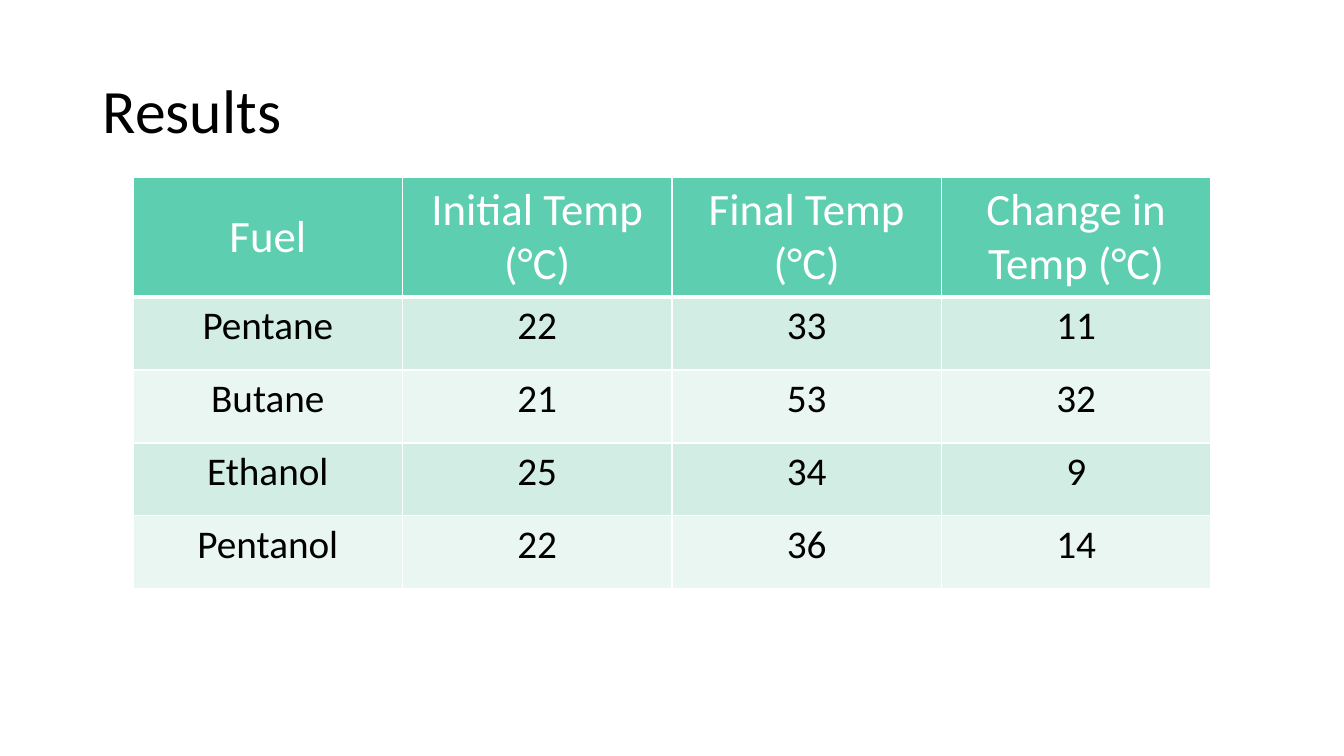
"""Build a results slide with a table of fuel temperatures."""
from lxml.etree import SubElement
from pptx import Presentation
from pptx.dml.color import RGBColor
from pptx.enum.text import MSO_ANCHOR as Anchor, PP_ALIGN as Align
from pptx.oxml.ns import qn
from pptx.util import Inches, Pt

HEADING = "Results"
COLUMNS = ["Fuel", "Initial Temp (°C)", "Final Temp (°C)", "Change in Temp (°C)"]
READINGS = [
    ("Pentane", 22, 33, 11),
    ("Butane", 21, 53, 32),
    ("Ethanol", 25, 34, 9),
    ("Pentanol", 22, 36, 14),
]
FONT = "Calibri"
WHITE, BLACK, GREEN = "FFFFFF", "000000", "5DCEAF"
BANDS = ["D2EDE3", "EAF6F2"]
HEADING_BOX = (0.92, 0.4, 11.5, 1.45)
RESULTS_BOX = (1.32, 1.76, 10.69, 3.62)


def color(code):
    return RGBColor.from_string(code)


def write(frame, text, size, ink, align, anchor):
    frame.vertical_anchor = anchor
    paragraph = frame.paragraphs[0]
    paragraph.alignment = align
    run = paragraph.add_run()
    run.text = text
    run.font.name, run.font.size, run.font.bold = FONT, Pt(size), False
    run.font.color.rgb = color(ink)
    return paragraph


def add_borders(cell, top, bottom):
    properties = cell._tc.get_or_add_tcPr()
    for side, width in (("L", 1), ("R", 1), ("T", top), ("B", bottom)):
        line = SubElement(properties, qn(f"a:ln{side}"), w=str(Pt(width)))
        fill = SubElement(line, qn("a:solidFill"))
        SubElement(fill, qn("a:srgbClr"), val=WHITE)


def add_heading(slide):
    title = slide.shapes.title
    title.left, title.top, title.width, title.height = map(Inches, HEADING_BOX)
    title.text_frame.word_wrap = True
    paragraph = write(title.text_frame, HEADING, 44, BLACK, Align.LEFT, Anchor.MIDDLE)
    paragraph.line_spacing = 0.9


def add_results(slide):
    rows = [COLUMNS, *READINGS]
    box = map(Inches, RESULTS_BOX)
    results = slide.shapes.add_table(len(rows), len(COLUMNS), *box).table
    for r, values in enumerate(rows):
        header = r == 0
        size, ink, anchor = (32, WHITE, Anchor.MIDDLE) if header else (28, BLACK, Anchor.TOP)
        for c, value in enumerate(values):
            cell = results.cell(r, c)
            add_borders(cell, 3 if r == 1 else 1, 3 if header else 1)
            cell.fill.solid()
            cell.fill.fore_color.rgb = color(GREEN if header else BANDS[(r - 1) % 2])
            cell.vertical_anchor = anchor
            write(cell.text_frame, str(value), size, ink, Align.CENTER, anchor)


def main():
    deck = Presentation()
    deck.slide_width, deck.slide_height = Inches(13.33), Inches(7.5)
    slide = deck.slides.add_slide(deck.slide_layouts[5])
    add_heading(slide)
    add_results(slide)
    deck.save("out.pptx")


if __name__ == "__main__":
    main()
